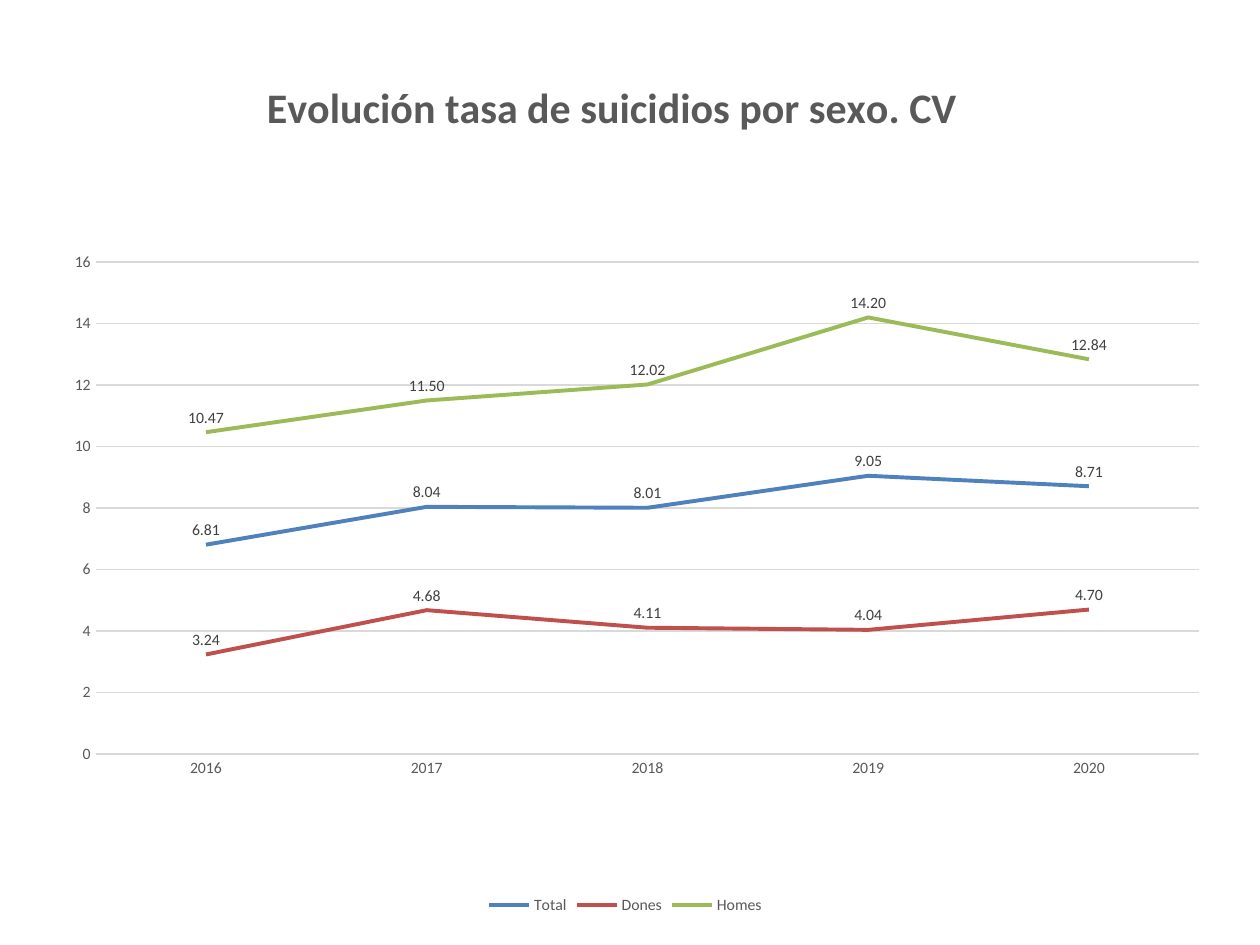
from lxml import etree
from pptx import Presentation
from pptx import util as u
from pptx.chart.data import CategoryChartData
from pptx.dml.color import RGBColor
from pptx.enum import chart as ch
from pptx.oxml.ns import qn

W, H = 10, 7.5
FONT = "Calibri"
C = {"text": "595959", "label": "404040", "grid": "D9D9D9", "base": "000000",
     "Total": "4F81BD", "Dones": "C0504D", "Homes": "9BBB59"}
YEARS = ["2016", "2017", "2018", "2019", "2020"]
RATES = {"Total": [6.81, 8.04, 8.01, 9.05, 8.71],
         "Dones": [3.24, 4.68, 4.11, 4.04, 4.70],
         "Homes": [10.47, 11.50, 12.02, 14.20, 12.84]}


def style_font(f, size=9, color="text", bold=False):
    f.name, f.size, f.bold = FONT, u.Pt(size), bold
    f.color.rgb = RGBColor.from_string(C[color])


def style_line(line, color, width):
    line.color.rgb = RGBColor.from_string(C[color])
    line.width = u.Pt(width)


def write(tf, text, **fmt):
    r = tf.paragraphs[0].add_run()
    r.text = text
    style_font(r.font, **fmt)


def set_layout(parent, index, target=None, **shares):
    for old in parent.findall(qn("c:layout")):
        parent.remove(old)
    layout = etree.Element(qn("c:layout"))
    manual = etree.SubElement(layout, qn("c:manualLayout"))
    settings = {"layoutTarget": target} if target else {}
    settings.update(xMode="edge", yMode="edge", **shares)
    for name, value in settings.items():
        etree.SubElement(manual, qn("c:" + name)).set("val", str(value))
    parent.insert(index, layout)


def style_axes(chart):
    cat, val = chart.category_axis, chart.value_axis
    for axis in (cat, val):
        axis.major_tick_mark = axis.minor_tick_mark = ch.XL_TICK_MARK.NONE
        style_font(axis.tick_labels.font)
    style_line(cat.format.line, "grid", 0.75)
    val.format.line.fill.background()
    val.has_major_gridlines = True
    style_line(val.major_gridlines.format.line, "grid", 0.75)
    val.minimum_scale, val.maximum_scale, val.major_unit = 0, 16, 2
    val.tick_labels.number_format = "#,##0"
    val.tick_labels.number_format_is_linked = False


def style_series(series):
    series.smooth = False
    series.marker.style = ch.XL_MARKER_STYLE.NONE
    style_line(series.format.line, series.name, 2.25)
    labels = series.data_labels
    labels.show_value = True
    labels.position = ch.XL_LABEL_POSITION.ABOVE
    labels.number_format, labels.number_format_is_linked = "0.00", False
    style_font(labels.font, color="label")


def rate_chart(s, x, y, w, h):
    data = CategoryChartData(number_format="0.00")
    data.categories = YEARS
    for name, values in RATES.items():
        data.add_series(name, values)
    chart = s.shapes.add_chart(ch.XL_CHART_TYPE.LINE, *map(u.Inches, (x, y, w, h)), data).chart
    style_font(chart.font, size=10, color="base")

    chart.has_title = True
    title = chart.chart_title
    write(title.text_frame, "Evolución tasa de suicidios por sexo. CV", size=24, bold=True)
    set_layout(title._element, 1, x=0.2, y=0.05)

    chart.has_legend = True
    chart.legend.position = ch.XL_LEGEND_POSITION.BOTTOM
    chart.legend.include_in_layout = False
    style_font(chart.legend.font)

    plot = chart.plots[0]
    plot.vary_by_categories = False
    set_layout(chart._chartSpace.chart.plotArea, 0, "inner", x=0.066, y=0.264, w=0.904, h=0.551)
    style_axes(chart)
    for series in plot.series:
        style_series(series)


def main():
    prs = Presentation()
    prs.slide_width, prs.slide_height = u.Inches(W), u.Inches(H)
    s = prs.slides.add_slide(prs.slide_layouts[6])
    rate_chart(s, 0.012 * W, 0.028 * H, 0.969 * W, 0.945 * H)
    prs.save("out.pptx")


if __name__ == "__main__":
    main()
